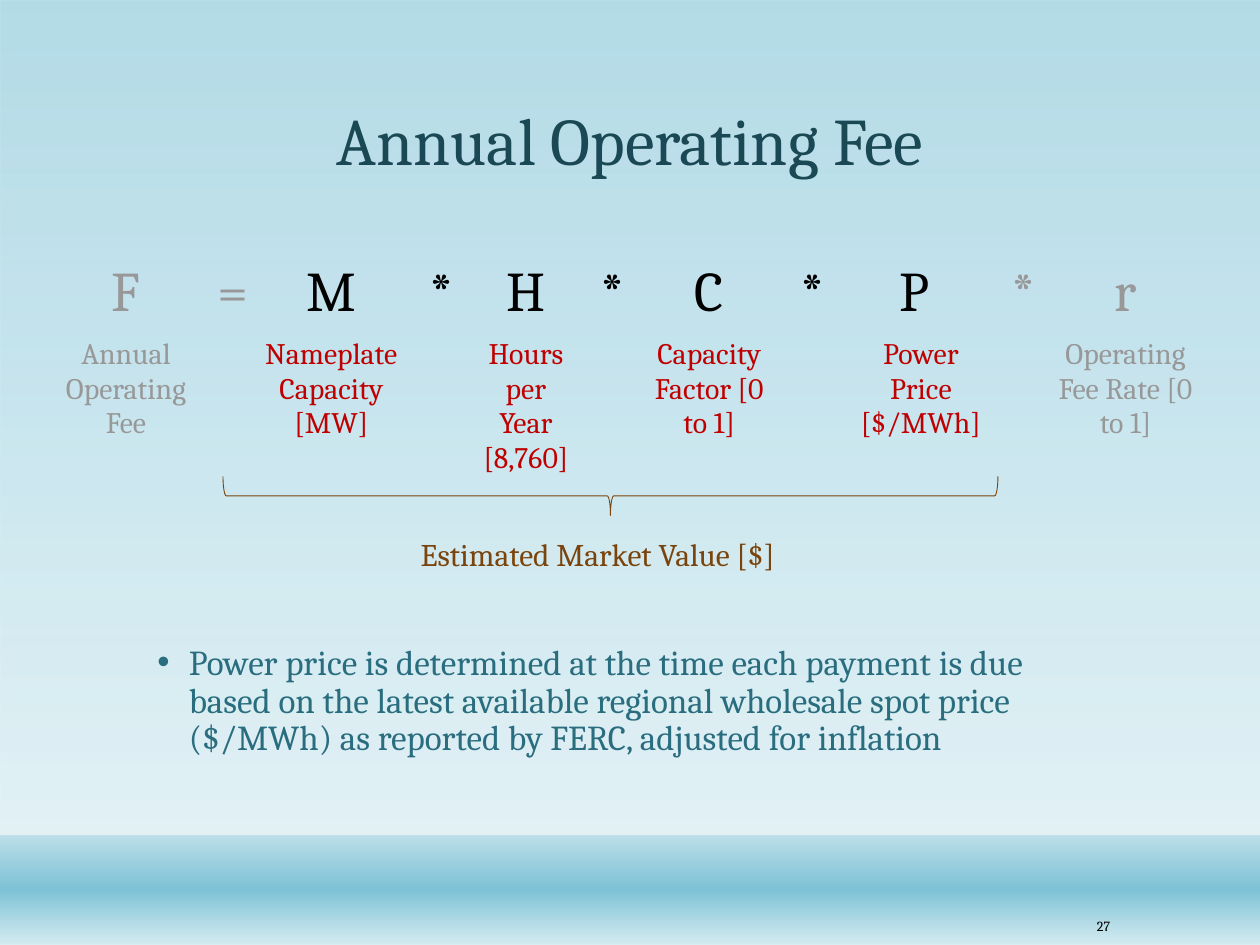
from dataclasses import dataclass
from typing import NamedTuple, Optional

from lxml.etree import SubElement
from pptx import Presentation
from pptx.dml.color import RGBColor
from pptx.enum.shapes import MSO_SHAPE
from pptx.enum.text import MSO_ANCHOR, MSO_AUTO_SIZE, PP_ALIGN
from pptx.oxml.ns import qn
from pptx.util import Emu, Inches, Pt

SLIDE_WIDTH, SLIDE_HEIGHT = Inches(10), Inches(7.5)
PLAIN_TABLE_STYLE = "{2D5ABB26-0587-4C30-8999-92F81FD0307C}"


@dataclass(frozen=True)
class Theme:
    font: str = "Cambria"
    title: str = "1B4855"
    body: str = "296D7F"
    muted: str = "989898"
    black: str = "000000"
    accent: str = "C00000"
    brown: str = "79440D"
    water: str = "7DC2D6"
    mist: str = "D4EBF1"
    title_size: int = 38
    symbol_size: int = 32
    body_size: int = 20
    label_size: int = 18
    caption_size: int = 17
    number_size: int = 8


THEME = Theme()


def across(percent: float) -> Emu:
    return Emu(round(SLIDE_WIDTH * percent / 100))


def down(percent: float) -> Emu:
    return Emu(round(SLIDE_HEIGHT * percent / 100))


class Area(NamedTuple):
    """A rectangle in percent of the slide's width and height."""
    left: float
    top: float
    width: float
    height: float

    def lengths(self) -> tuple:
        return across(self.left), down(self.top), across(self.width), down(self.height)


class Stop(NamedTuple):
    position: int
    color: str
    opacity: int


class Term(NamedTuple):
    """One column of the formula; operators have no caption."""
    width: float
    symbol: str
    color: str = THEME.black
    caption: str = ""
    caption_color: str = THEME.accent


@dataclass(frozen=True)
class Label:
    area: Area
    text: str
    size: int
    color: str
    align: PP_ALIGN = PP_ALIGN.LEFT
    anchor: MSO_ANCHOR = MSO_ANCHOR.TOP
    line_spacing: Optional[float] = None
    bullet: str = ""
    grows: bool = False


BACKGROUNDS = [
    (Area(0, 0, 100, 100), [Stop(0, THEME.water, 58), Stop(88, THEME.mist, 65)]),
    (Area(0, 88.4, 100, 11.6),
     [Stop(1, THEME.water, 38), Stop(49, THEME.water, 100), Stop(100, THEME.mist, 89)]),
]

FORMULA = [
    Term(12.6, "F", THEME.muted, "Annual Operating Fee", THEME.muted),
    Term(3.2, "=", THEME.muted),
    Term(13.6, "M", caption="Nameplate Capacity [MW]"),
    Term(3.7, "*"),
    Term(9.9, "H", caption="Hours per Year [8,760]"),
    Term(3.8, "*"),
    Term(11.6, "C", caption="Capacity Factor [0 to 1]"),
    Term(4.8, "*"),
    Term(12.4, "P ", caption="Power Price [$/MWh]"),
    Term(3.7, "*", THEME.muted),
    Term(12.7, "r", THEME.muted, "Operating Fee Rate [0 to 1]", THEME.muted),
]
FORMULA_LEFT, FORMULA_TOP = 3.7, 26.93
FORMULA_ROWS = (5.47, 21.87)
BRACE = Area(46.9, 11.47, 3.1, 82)

LABELS = [
    Label(Area(11, 3.87, 78, 15.87), "Annual Operating Fee", THEME.title_size,
          THEME.title, PP_ALIGN.CENTER, MSO_ANCHOR.BOTTOM, 0.9),
    Label(Area(83.8, 96.27, 5.3, 3.47), "27", THEME.number_size, THEME.black,
          PP_ALIGN.RIGHT, MSO_ANCHOR.MIDDLE),
    Label(Area(11, 67.6, 78, 15.73),
          "Power price is determined at the time each payment is due based on the "
          "latest available regional wholesale spot price ($/MWh) as reported by "
          "FERC, adjusted for inflation",
          THEME.body_size, THEME.body, line_spacing=0.9, bullet="•"),
    Label(Area(32.4, 56, 33.4, 5.33), "Estimated Market Value [$]",
          THEME.label_size, THEME.brown, grows=True),
]


def add_run(paragraph, text: str, size: int, color: str) -> None:
    run = paragraph.add_run()
    run.text = text
    run.font.name = THEME.font
    run.font.size = Pt(size)
    run.font.color.rgb = RGBColor.from_string(color)


def add_background(slide, area: Area, stops: list) -> None:
    shape = slide.shapes.add_shape(MSO_SHAPE.RECTANGLE, *area.lengths())
    shape.shadow.inherit = False
    shape.line.fill.background()
    shape.fill.gradient()
    shape.fill.gradient_angle = 270
    stop_list = shape.element.spPr.find(".//" + qn("a:gsLst"))
    for old_stop in list(stop_list):
        stop_list.remove(old_stop)
    for stop in stops:
        node = SubElement(stop_list, qn("a:gs"), pos=str(stop.position * 1000))
        color = SubElement(node, qn("a:srgbClr"), val=stop.color)
        SubElement(color, qn("a:alpha"), val=str(stop.opacity * 1000))


def add_label(slide, label: Label) -> None:
    frame = slide.shapes.add_textbox(*label.area.lengths()).text_frame
    frame.word_wrap = True
    frame.vertical_anchor = label.anchor
    if label.grows:
        frame.auto_size = MSO_AUTO_SIZE.SHAPE_TO_FIT_TEXT
    paragraph = frame.paragraphs[0]
    paragraph.alignment = label.align
    if label.line_spacing:
        paragraph.line_spacing = label.line_spacing
    if label.bullet:
        properties = paragraph._p.get_or_add_pPr()
        properties.set("marL", str(Inches(0.3)))
        properties.set("indent", str(-Inches(0.25)))
        SubElement(properties, qn("a:buFont"), typeface="Arial")
        SubElement(properties, qn("a:buChar"), char=label.bullet)
    add_run(paragraph, label.text, label.size, label.color)


def add_formula(slide, terms: list) -> None:
    area = Area(FORMULA_LEFT, FORMULA_TOP, sum(term.width for term in terms), sum(FORMULA_ROWS))
    frame = slide.shapes.add_table(len(FORMULA_ROWS), len(terms), *area.lengths())
    table = frame.table
    table.first_row = table.horz_banding = False
    frame.element.find(".//" + qn("a:tableStyleId")).text = PLAIN_TABLE_STYLE
    for row, height in zip(table.rows, FORMULA_ROWS):
        row.height = down(height)
    for index, term in enumerate(terms):
        table.columns[index].width = across(term.width)
        entries = [(term.symbol, THEME.symbol_size, term.color),
                   (term.caption, THEME.caption_size, term.caption_color)]
        for row_index, (text, size, color) in enumerate(entries):
            cell = table.cell(row_index, index)
            cell.fill.background()
            if text:
                paragraph = cell.text_frame.paragraphs[0]
                paragraph.alignment = PP_ALIGN.CENTER
                add_run(paragraph, text, size, color)


def add_brace(slide, area: Area) -> None:
    brace = slide.shapes.add_shape(MSO_SHAPE.LEFT_BRACE, *area.lengths())
    brace.rotation = 270
    brace.shadow.inherit = False
    brace.fill.background()
    brace.line.color.rgb = RGBColor.from_string(THEME.brown)
    brace.line.width = Pt(0.5)


def main() -> None:
    presentation = Presentation()
    presentation.slide_width, presentation.slide_height = SLIDE_WIDTH, SLIDE_HEIGHT
    slide = presentation.slides.add_slide(presentation.slide_layouts[6])
    # Sky and water
    for area, stops in BACKGROUNDS:
        add_background(slide, area, stops)
    # Formula with the brace under its market value terms
    add_formula(slide, FORMULA)
    add_brace(slide, BRACE)
    # Title, page number, note and brace label
    for label in LABELS:
        add_label(slide, label)
    presentation.save("out.pptx")


if __name__ == "__main__":
    main()
